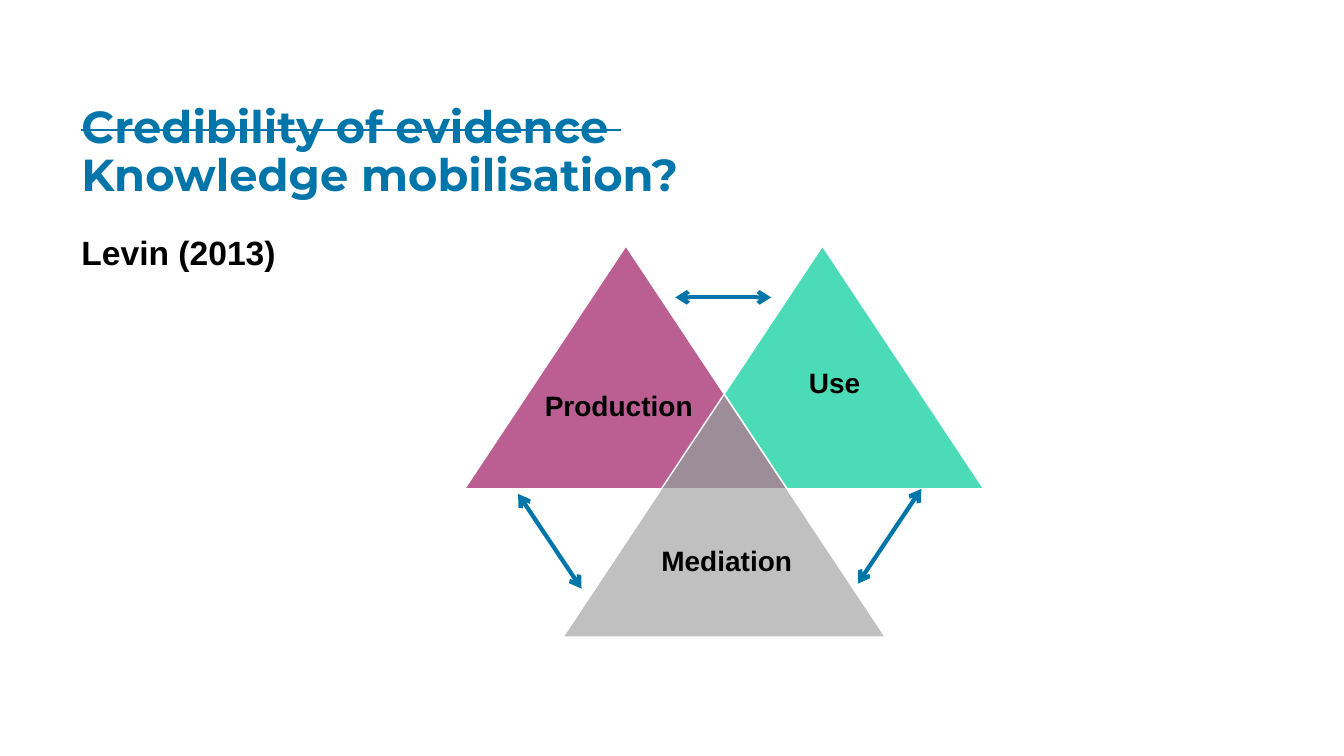
import lxml.etree
import pptx
import pptx.dml.color
import pptx.enum.shapes
import pptx.enum.text
import pptx.oxml.ns
import pptx.util

Pt = pptx.util.Pt
BLUE = "0075AA"
BLACK = "000000"
TRIANGLE_WIDTH, TRIANGLE_HEIGHT = 230.4, 173.5
LABEL_WIDTH, LABEL_HEIGHT = 233.3, 31.7
LEFT, TOP = 331.9, 175.7
TRIANGLE_STEP = 140.4

# Name, colour, triangle left and top, label left and top
ROLES = [
    ("Use", "00CC99", LEFT + TRIANGLE_STEP, TOP, 479.5, 257.8),
    ("Production", "9F1C64", LEFT, TOP, 325.4, 274.3),
    ("Mediation", "A6A6A6", LEFT + TRIANGLE_STEP / 2, 281.6, 402.5, 384.5),
]
# Start and end of each two-way arrow
ARROWS = [
    (370.1, 352.8, 415.4, 420.5),
    (658.1, 349.2, 612.7, 416.9),
    (550.8, 212.4, 482.4, 212.4),
]


def color(value):
    return pptx.dml.color.RGBColor.from_string(value)


def add_child(parent, tag, **attributes):
    child = lxml.etree.SubElement(parent, pptx.oxml.ns.qn(tag))
    for name, value in attributes.items():
        child.set(name, value)
    return child


def set_font(paragraph, name, size, value):
    font = paragraph.font
    font.name = name
    font.size = Pt(size)
    font.bold = True
    font.color.rgb = color(value)


def add_text_box(shapes, left, top, width, height):
    box = shapes.add_textbox(Pt(left), Pt(top), Pt(width), Pt(height))
    box.text_frame.word_wrap = True
    return box.text_frame.paragraphs[0]


def add_title(slide, struck_text, text):
    paragraph = add_text_box(slide.shapes, 51.1, 71.3, 828, 88.6)
    paragraph.line_spacing = 0.9
    struck = paragraph.add_run()
    struck.text = struck_text
    struck._r.get_or_add_rPr().set("strike", "sngStrike")
    paragraph.add_line_break()
    paragraph.add_run().text = text
    set_font(paragraph, "Montserrat", 32, BLUE)


def add_role(slide, name, fill, left, top, label_left, label_top):
    group = slide.shapes.add_group_shape()
    triangle = group.shapes.add_shape(
        pptx.enum.shapes.MSO_SHAPE.ISOSCELES_TRIANGLE,
        Pt(left), Pt(top), Pt(TRIANGLE_WIDTH), Pt(TRIANGLE_HEIGHT))
    triangle.shadow.inherit = False
    triangle.fill.solid()
    triangle.fill.fore_color.rgb = color(fill)
    fill_color = triangle._element.spPr.find(".//" + pptx.oxml.ns.qn("a:srgbClr"))
    add_child(fill_color, "a:alpha", val="70000")
    triangle.line.color.rgb = color("FFFFFF")
    triangle.line.width = Pt(1)

    paragraph = add_text_box(group.shapes, label_left, label_top, LABEL_WIDTH, LABEL_HEIGHT)
    paragraph.text = name
    paragraph.alignment = pptx.enum.text.PP_ALIGN.CENTER
    set_font(paragraph, "Arial", 20, BLACK)


def add_two_way_arrow(slide, *ends):
    arrow = slide.shapes.add_connector(
        pptx.enum.shapes.MSO_CONNECTOR.STRAIGHT, *[Pt(end) for end in ends])
    arrow.line.color.rgb = color(BLUE)
    arrow.line.width = Pt(3)
    outline = arrow.line._get_or_add_ln()
    add_child(outline, "a:headEnd", type="arrow")
    add_child(outline, "a:tailEnd", type="arrow")
    add_child(arrow._element.spPr, "a:effectLst")


def add_citation(slide, text):
    paragraph = add_text_box(slide.shapes, 51.1, 165.6, 776.9, 273.6)
    paragraph.text = text
    paragraph.line_spacing = 0.9
    set_font(paragraph, "Arial", 24, BLACK)


def main():
    presentation = pptx.Presentation()
    presentation.slide_width = Pt(960)
    presentation.slide_height = Pt(540)
    slide = presentation.slides.add_slide(presentation.slide_layouts[6])

    # Heading
    add_title(slide, "Credibility of evidence ", "Knowledge mobilisation?")

    # Overlapping triangles and the arrows between them
    for role in ROLES:
        add_role(slide, *role)
    for arrow in ARROWS:
        add_two_way_arrow(slide, *arrow)

    # Citation
    add_citation(slide, "Levin (2013)")
    presentation.save("out.pptx")


if __name__ == "__main__":
    main()
